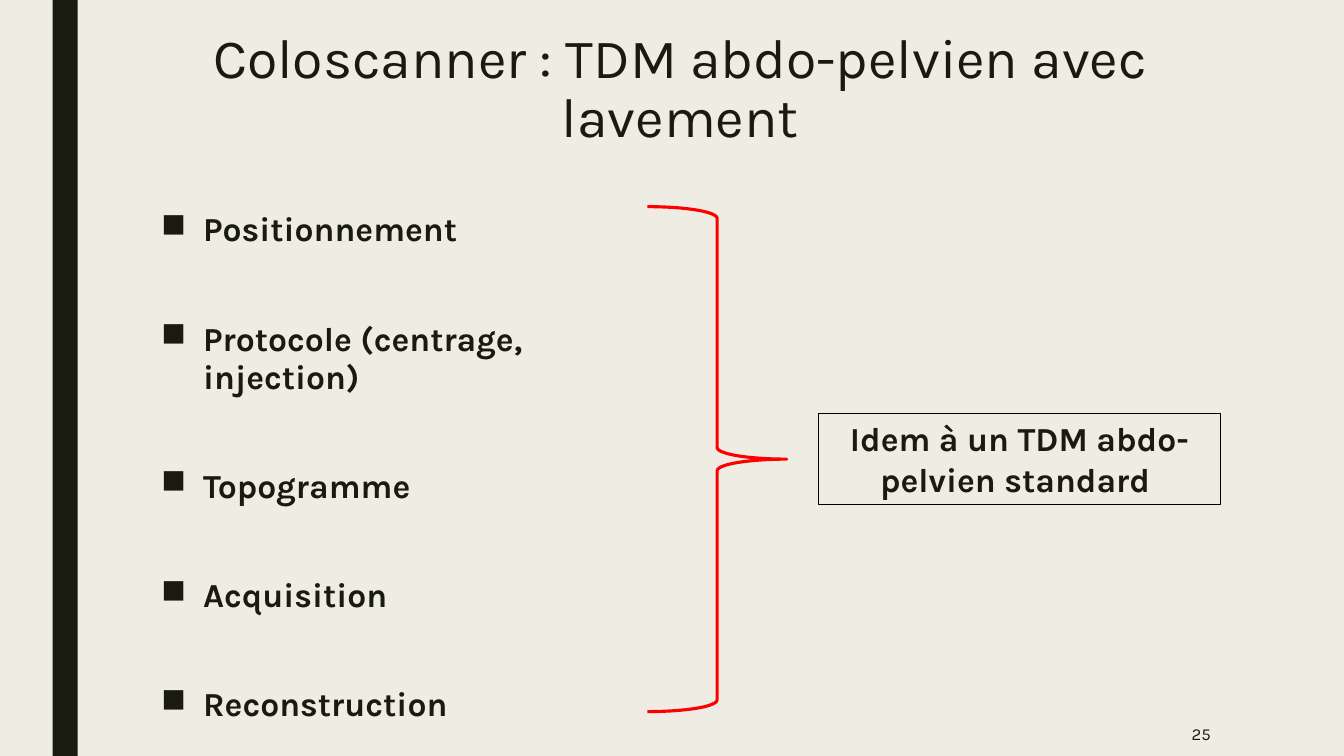
from lxml.etree import SubElement
from pptx import Presentation
from pptx.dml.color import RGBColor
from pptx.enum.shapes import MSO_SHAPE as Shape
from pptx.enum.text import MSO_ANCHOR as Anchor, PP_ALIGN as Align
from pptx.oxml.ns import qn
from pptx.util import Pt

INK = RGBColor(0x19, 0x1B, 0x0E)
CREAM = RGBColor(0xEF, 0xED, 0xE3)
RED = RGBColor(0xFF, 0x00, 0x00)
BLACK = RGBColor(0x00, 0x00, 0x00)

deck = Presentation()
deck.slide_width, deck.slide_height = Pt(960), Pt(540)
slide = deck.slides.add_slide(deck.slide_layouts[6])
slide.background.fill.solid()
slide.background.fill.fore_color.rgb = CREAM


def add_outline(preset, left, top, width, height, color, weight):
    shape = slide.shapes.add_shape(preset, Pt(left), Pt(top), Pt(width), Pt(height))
    shape.shadow.inherit = False
    shape.fill.background()
    shape.line.color.rgb = color
    shape.line.width = Pt(weight)
    return shape


def write(paragraph, text, size, align, bold=False):
    paragraph.alignment = align
    run = paragraph.add_run()
    run.text = text
    run.font.name = "Karla"
    run.font.size = Pt(size)
    run.font.bold = bold
    run.font.color.rgb = INK


# Dark band on the left
band = slide.shapes.add_shape(Shape.RECTANGLE, Pt(37.5), 0, Pt(18), Pt(540))
band.shadow.inherit = False
band.fill.solid()
band.fill.fore_color.rgb = INK
band.line.fill.background()

# Title
title = slide.shapes.add_textbox(Pt(108), Pt(18.7), Pt(756), Pt(90.7)).text_frame
title.word_wrap = True
title.paragraphs[0].line_spacing = 0.89
write(title.paragraphs[0], "Coloscanner : TDM abdo-pelvien avec lavement", 39.6, Align.CENTER)

# Examination steps
steps = slide.shapes.add_textbox(Pt(108), Pt(147.6), Pt(383), Pt(360.7)).text_frame
steps.word_wrap = True
step_names = ["Positionnement", "Protocole (centrage, injection)", "Topogramme",
              "Acquisition", "Reconstruction"]
for index, step_name in enumerate(step_names):
    step = steps.add_paragraph() if index else steps.paragraphs[0]
    step.line_spacing = 0.94
    step.space_before = Pt(10)
    step.space_after = Pt(41)
    write(step, step_name, 24, Align.LEFT, bold=True)
    properties = step._p.get_or_add_pPr()
    properties.set("marL", str(Pt(30)))
    properties.set("indent", str(-Pt(30)))
    SubElement(properties, qn("a:buChar")).set("char", "■")

# Brace leading to the conclusion
add_outline(Shape.RIGHT_BRACE, 462.5, 147.6, 99.5, 360.7, RED, 2.25)
conclusion = add_outline(Shape.RECTANGLE, 584.5, 295.2, 287.3, 65.4, BLACK, 0.75).text_frame
conclusion.word_wrap = True
conclusion.vertical_anchor = Anchor.TOP
write(conclusion.paragraphs[0], "Idem à un TDM abdo-pelvien standard ", 24, Align.CENTER, bold=True)

# Page number
page = slide.shapes.add_textbox(Pt(746), Pt(508.6), Pt(126), Pt(31.4)).text_frame
page.word_wrap = True
page.vertical_anchor = Anchor.MIDDLE
write(page.paragraphs[0], "25", 12, Align.RIGHT)

deck.save("out.pptx")
